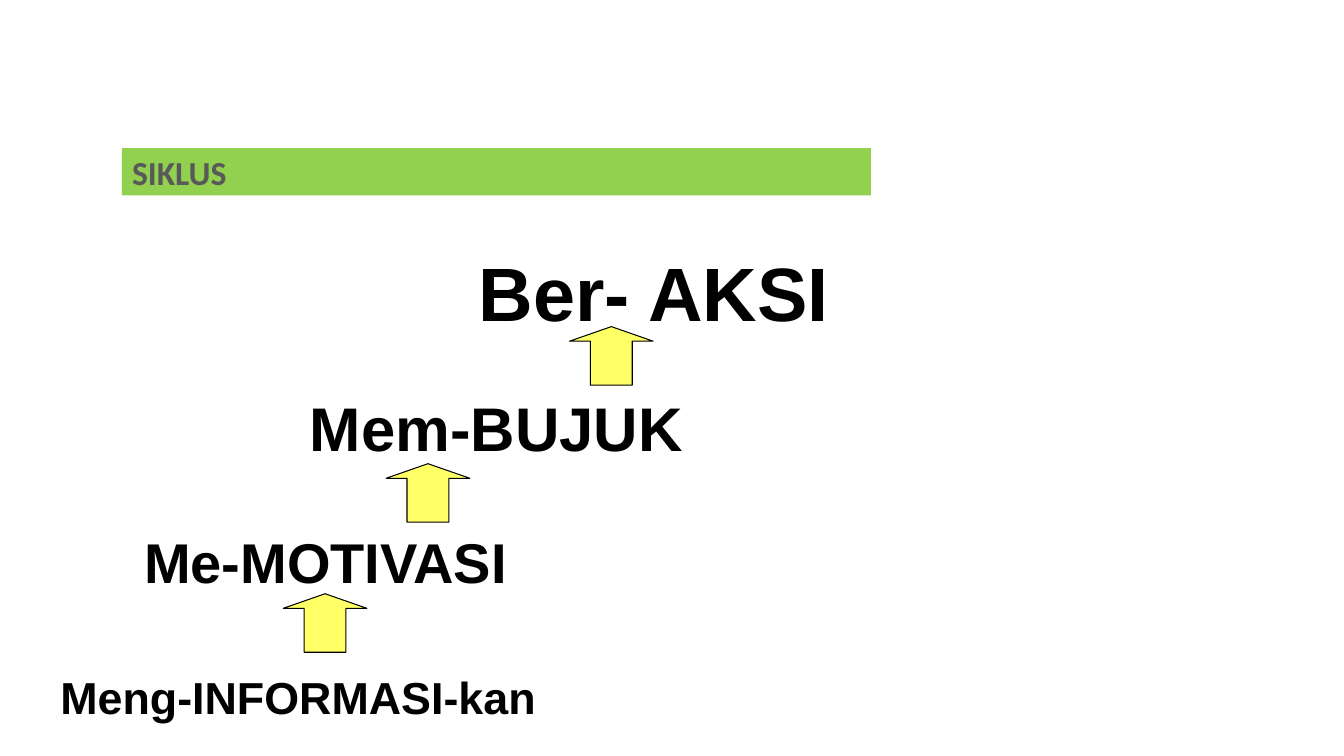
"""Build the SIKLUS slide: four steps rising from information to action."""
from pptx import Presentation
from pptx import util as u
from pptx.dml import color
from pptx.enum import shapes, text

STEPS = [
    ("Meng-INFORMASI-kan", 32, (30.2, 474.5, 365.8, 45.4)),
    ("Me-MOTIVASI", 40, (55.4, 373, 354.2, 55.4)),
    ("Mem-BUJUK", 44, (144.7, 275, 419.8, 59.8)),
    ("Ber- AKSI", 54, (205.9, 172.1, 522, 72)),
]
ARROW_CORNERS = [(202.3, 424.1), (275.8, 331.2), (406.8, 233.3)]
ARROW_SIZE = (59.8, 41.8)


def rgb(value):
    """Return the colour for a hex string."""
    return color.RGBColor.from_string(value)


def points(*lengths):
    """Convert numbers to lengths in points."""
    return [u.Pt(length) for length in lengths]


def fill_solid(shape, value):
    """Give a shape a plain fill."""
    shape.fill.solid()
    shape.fill.fore_color.rgb = rgb(value)


def write(shape, wording, font_name, size, value, alignment):
    """Put one bold line of text in a shape."""
    frame = shape.text_frame
    frame.text = wording
    frame.word_wrap = True
    paragraph = frame.paragraphs[0]
    paragraph.alignment = alignment
    paragraph.space_before = u.Pt(0)
    font = paragraph.runs[0].font
    font.name, font.size, font.bold = font_name, u.Pt(size), True
    font.color.rgb = rgb(value)


def add_title(slide, wording):
    """Turn the title placeholder into a green band."""
    title = slide.shapes.title
    title.left, title.top, title.width, title.height = points(87.1, 105.8, 535, 33.8)
    fill_solid(title, "92D050")
    write(title, wording, "Calibri", 24, "595959", text.PP_ALIGN.LEFT)
    title.text_frame.auto_size = text.MSO_AUTO_SIZE.NONE
    title.text_frame.vertical_anchor = text.MSO_ANCHOR.MIDDLE


def add_step(slide, wording, size, box):
    """Add the label of one step."""
    label = slide.shapes.add_textbox(*points(*box))
    write(label, wording, "Arial", size, "000000", text.PP_ALIGN.CENTER)
    label.text_frame.auto_size = text.MSO_AUTO_SIZE.SHAPE_TO_FIT_TEXT


def add_up_arrow(slide, left, top):
    """Add a yellow arrow leading to the next step."""
    arrow = slide.shapes.add_shape(
        shapes.MSO_SHAPE.UP_ARROW, *points(left, top, *ARROW_SIZE))
    arrow.adjustments[0] = 0.5
    arrow.adjustments[1] = 0.25
    arrow.shadow.inherit = False
    fill_solid(arrow, "FFFF66")
    arrow.line.color.rgb = rgb("000000")
    arrow.line.width = u.Pt(0.75)


def main():
    """Build and save the presentation."""
    presentation = Presentation()
    presentation.slide_width, presentation.slide_height = points(960, 540)
    slide = presentation.slides.add_slide(presentation.slide_layouts[5])
    add_title(slide, "SIKLUS")
    for wording, size, box in STEPS:
        add_step(slide, wording, size, box)
    for left, top in ARROW_CORNERS:
        add_up_arrow(slide, left, top)
    presentation.save("out.pptx")


if __name__ == "__main__":
    main()
